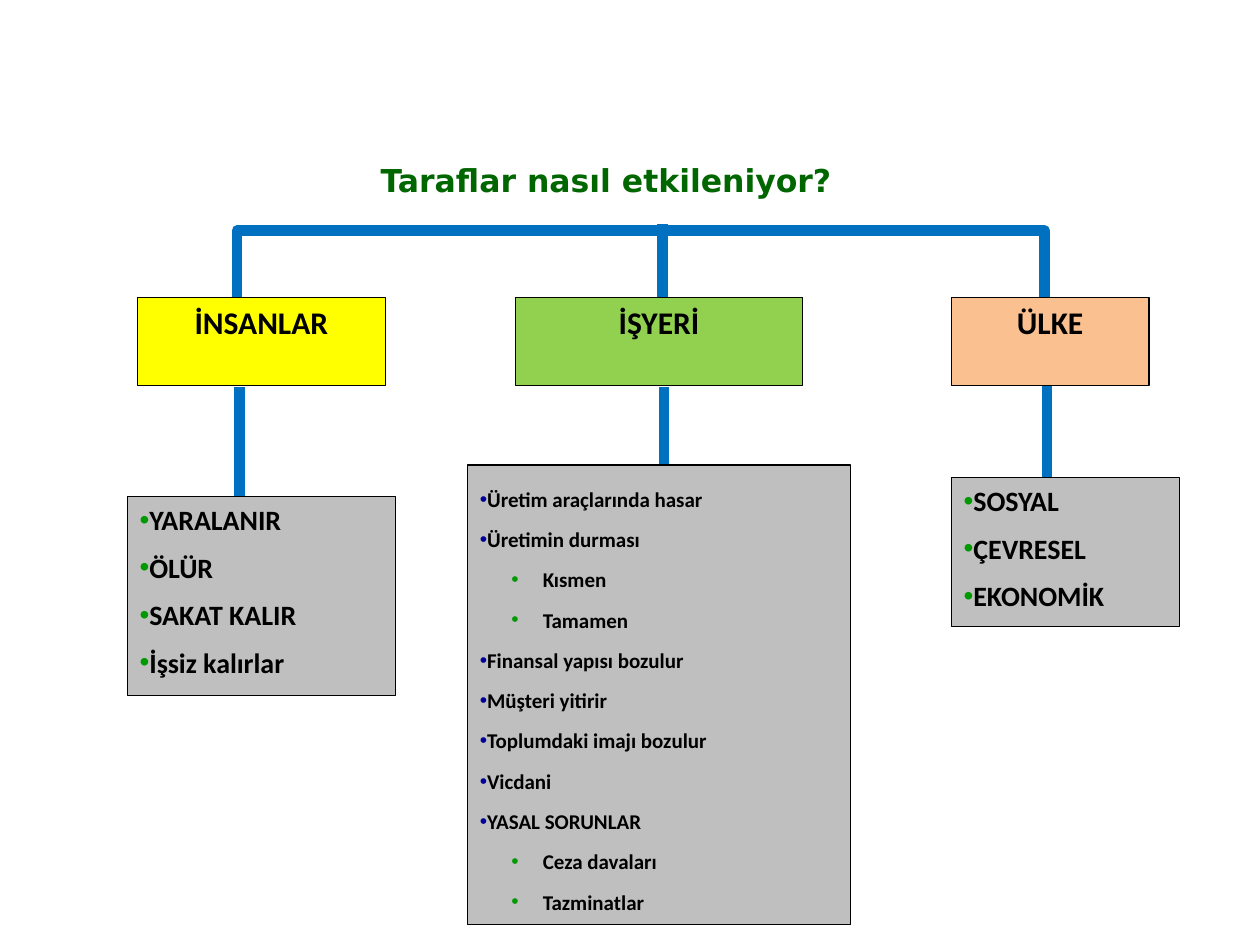
from typing import NamedTuple

from lxml import etree
from pptx import Presentation
from pptx import util as u
from pptx.dml.color import RGBColor
from pptx.enum import shapes, text
from pptx.oxml import ns

BLACK = "000000"
BLUE = "0070C0"
GREY = "BFBFBF"
GREEN_BULLET = "009900"
NAVY_BULLET = "000099"


class Box(NamedTuple):
    left: float
    top: float
    width: float
    height: float


class Item(NamedTuple):
    wording: str
    level: int = 0


class Party(NamedTuple):
    heading: str
    fill: str
    heading_box: Box
    effects_box: Box
    effects: list[Item]
    size: int = 16
    bullet: str = GREEN_BULLET
    line_spacing: float = 1.0
    gap: float = 8


class Stem(NamedTuple):
    x: float
    top: float
    bottom: float


PARTIES = [
    Party("İŞYERİ", "92D050", Box(4.09, 2.36, 2.28, 0.7), Box(3.71, 3.69, 3.04, 3.65),
          [Item("Üretim araçlarında hasar"), Item("Üretimin durması"),
           Item("Kısmen", 1), Item("Tamamen", 1),
           Item("Finansal yapısı bozulur"), Item("Müşteri yitirir"),
           Item("Toplumdaki imajı bozulur"), Item("Vicdani"),
           Item("YASAL SORUNLAR"), Item("Ceza davaları", 1), Item("Tazminatlar", 1)],
          size=12, bullet=NAVY_BULLET, line_spacing=1.6, gap=0),
    Party("İNSANLAR", "FFFF00", Box(1.09, 2.36, 1.97, 0.7), Box(1.01, 3.94, 2.13, 1.58),
          [Item("YARALANIR"), Item("ÖLÜR"), Item("SAKAT KALIR"), Item("İşsiz kalırlar")]),
    Party("ÜLKE", "FAC090", Box(7.55, 2.36, 1.57, 0.7), Box(7.55, 3.79, 1.81, 1.18),
          [Item("SOSYAL"), Item("ÇEVRESEL"), Item("EKONOMİK")]),
]

STEMS = [Stem(5.26, 1.78, 2.83), Stem(1.9, 3.07, 4.35),
         Stem(5.27, 3.07, 4.38), Stem(8.31, 3.03, 4.34)]
BRACKET = [(1.88, 2.4), (1.88, 1.83), (8.29, 1.83), (8.29, 2.41)]


def color(value: str) -> RGBColor:
    return RGBColor.from_string(value)


def style_line(line, value: str, width: float) -> None:
    line.color.rgb = color(value)
    line.width = u.Pt(width)


def add_run(paragraph, wording: str, size: float, font: str = "Calibri",
            value: str = BLACK) -> None:
    run = paragraph.add_run()
    run.text = wording
    run.font.name = font
    run.font.size = u.Pt(size)
    run.font.bold = True
    run.font.color.rgb = color(value)


def add_bullet(paragraph, value: str, level: int) -> None:
    properties = paragraph._p.get_or_add_pPr()
    properties.set("marL", str(u.Inches(0.5 * level)))
    properties.set("indent", str(u.Inches(-0.25 * level)))
    tint = etree.SubElement(properties, ns.qn("a:buClr"))
    etree.SubElement(tint, ns.qn("a:srgbClr"), val=value)
    etree.SubElement(properties, ns.qn("a:buFont"), typeface="Arial")
    etree.SubElement(properties, ns.qn("a:buChar"), char="•")


def add_panel(slide, box: Box, fill: str):
    panel = slide.shapes.add_shape(shapes.MSO_SHAPE.RECTANGLE, *map(u.Inches, box))
    panel.shadow.inherit = False
    panel.fill.solid()
    panel.fill.fore_color.rgb = color(fill)
    style_line(panel.line, BLACK, 0.75)
    frame = panel.text_frame
    frame.word_wrap = True
    frame.vertical_anchor = text.MSO_ANCHOR.TOP
    return frame


def add_stem(slide, stem: Stem) -> None:
    x = u.Inches(stem.x)
    connector = slide.shapes.add_connector(
        shapes.MSO_CONNECTOR.STRAIGHT, x, u.Inches(stem.top), x, u.Inches(stem.bottom))
    style_line(connector.line, BLUE, 6)
    etree.SubElement(connector._element.spPr, ns.qn("a:effectLst"))


def add_bracket(slide) -> None:
    start, *corners = [(u.Inches(x), u.Inches(y)) for x, y in BRACKET]
    builder = slide.shapes.build_freeform(*start)
    builder.add_line_segments(corners, close=False)
    bracket = builder.convert_to_shape()
    bracket.shadow.inherit = False
    bracket.fill.background()
    style_line(bracket.line, BLUE, 6)


def add_party(slide, party: Party) -> None:
    heading = add_panel(slide, party.heading_box, party.fill).paragraphs[0]
    heading.alignment = text.PP_ALIGN.CENTER
    add_run(heading, party.heading, 18)

    frame = add_panel(slide, party.effects_box, GREY)
    for index, item in enumerate(party.effects):
        paragraph = frame.add_paragraph() if index else frame.paragraphs[0]
        paragraph.level = item.level
        paragraph.alignment = text.PP_ALIGN.LEFT
        paragraph.line_spacing = party.line_spacing
        paragraph.space_before = u.Pt(party.gap if index else 0)
        add_bullet(paragraph, GREEN_BULLET if item.level else party.bullet, item.level)
        add_run(paragraph, item.wording, party.size)


def add_title(slide, box: Box, wording: str) -> None:
    title = slide.shapes.title
    title.left, title.top, title.width, title.height = map(u.Inches, box)
    frame = title.text_frame
    frame.word_wrap = True
    frame.auto_size = text.MSO_AUTO_SIZE.NONE
    frame.vertical_anchor = text.MSO_ANCHOR.TOP
    paragraph = frame.paragraphs[0]
    paragraph.alignment = text.PP_ALIGN.LEFT
    add_run(paragraph, wording, 18, "DejaVu Sans", "006600")


def main() -> None:
    deck = Presentation()
    deck.slide_width, deck.slide_height = u.Inches(10), u.Inches(7.5)
    slide = deck.slides.add_slide(deck.slide_layouts.get_by_name("Title Only"))
    add_title(slide, Box(2.92, 1.23, 5.08, 0.4), "Taraflar nasıl etkileniyor?")
    add_bracket(slide)
    for stem in STEMS:
        add_stem(slide, stem)
    for party in PARTIES:
        add_party(slide, party)
    deck.save("out.pptx")


if __name__ == "__main__":
    main()
